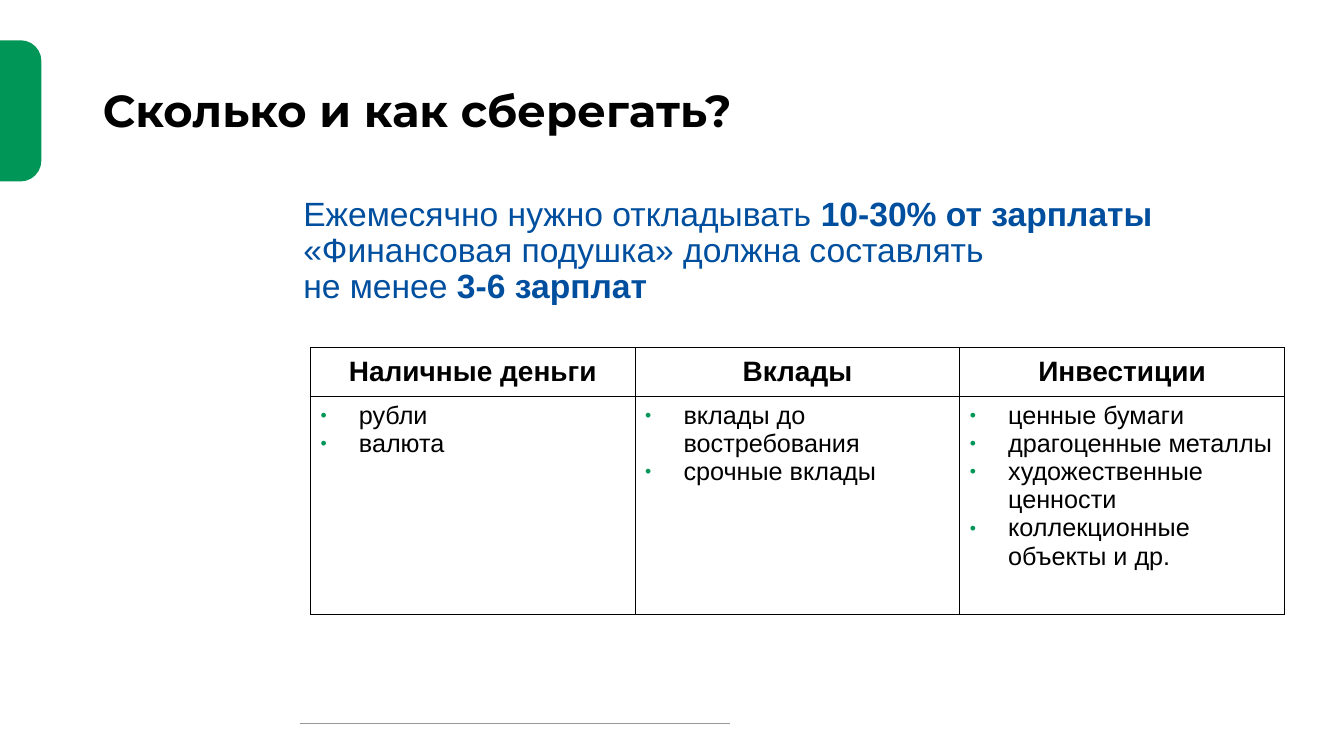
from lxml.etree import SubElement
from pptx import Presentation
from pptx.dml.color import RGBColor
from pptx.enum.shapes import MSO_CONNECTOR, MSO_SHAPE
from pptx.enum.text import MSO_ANCHOR as ANCHOR, MSO_AUTO_SIZE as AUTO, PP_ALIGN as ALIGN
from pptx.oxml.ns import qn
from pptx.util import Pt

PX = 9144
BLACK, GREEN, BLUE, GRAY = "000000", "009657", "004F9F", "999999"

ADVICE = [
    [("Ежемесячно нужно откладывать ", False), ("10-30% от зарплаты", True)],
    [("«Финансовая подушка» должна составлять", False)],
    [("не менее ", False), ("3-6 зарплат", True)],
]
SAVINGS = {
    "Наличные деньги": ["рубли", "валюта"],
    "Вклады": ["вклады до востребования", "срочные вклады"],
    "Инвестиции": ["ценные бумаги", "драгоценные металлы",
                   "художественные ценности", "коллекционные объекты и др."],
}


def rgb(code):
    """Turn a hex string into a colour."""
    return RGBColor.from_string(code)


def emu(*lengths):
    """Turn px lengths into EMU."""
    return [n * PX for n in lengths]


def style(r, size, color, bold=False, face="Arial"):
    """Format one run."""
    r.font.size, r.font.bold, r.font.name = Pt(size), bold, face
    r.font.color.rgb = rgb(color)


def add_bullet(p, indent):
    """Give a paragraph a hanging green bullet."""
    pPr = p._p.get_or_add_pPr()
    pPr.set("marL", str(indent * PX))
    pPr.set("indent", str(-indent * PX))
    SubElement(SubElement(pPr, qn("a:buClr")), qn("a:srgbClr"), val=GREEN)
    SubElement(pPr, qn("a:buSzPct"), val="70000")
    SubElement(pPr, qn("a:buFont"), typeface="Arial")
    SubElement(pPr, qn("a:buChar"), char="•")


def add_borders(cell):
    """Draw thin black lines on all sides of a cell."""
    tcPr = cell._tc.get_or_add_tcPr()
    for side in ("lnL", "lnR", "lnT", "lnB"):
        ln = SubElement(tcPr, qn(f"a:{side}"), w=str(Pt(1)))
        SubElement(SubElement(ln, qn("a:solidFill")), qn("a:srgbClr"), val=BLACK)


def add_tab(s, x, y, w, h):
    """Place the green side tab, rounded on its right."""
    left, top = x + (w - h) / 2, y + (h - w) / 2
    sp = s.shapes.add_shape(MSO_SHAPE.ROUND_2_SAME_RECTANGLE,
                            *(round(n) for n in emu(left, top, h, w)))
    sp.rotation = 90
    sp.adjustments[0], sp.adjustments[1] = 0.5, 0
    sp.shadow.inherit = False
    sp.fill.solid()
    sp.fill.fore_color.rgb = rgb(GREEN)
    sp.line.fill.background()


def add_rule(s, x, y, w):
    """Place the thin line at the foot."""
    line = s.shapes.add_connector(MSO_CONNECTOR.STRAIGHT, *emu(x, y, x + w, y))
    line.line.color.rgb = rgb(GRAY)
    line.line.width = Pt(0.75)
    SubElement(line._element.spPr, qn("a:effectLst"))


def add_title(s, x, y, w, h):
    """Fill the title placeholder."""
    sp = s.shapes.title
    sp.left, sp.top, sp.width, sp.height = emu(x, y, w, h)
    tf = sp.text_frame
    tf.text = "Сколько и как сберегать?"
    tf.auto_size, tf.vertical_anchor = AUTO.NONE, ANCHOR.MIDDLE
    p = tf.paragraphs[0]
    p.alignment, p.line_spacing = ALIGN.LEFT, 0.9
    style(p.runs[0], 32, BLACK, True, "Montserrat")


def add_advice(s, x, y, w, h):
    """Place the advice on how much to save."""
    tf = s.shapes.add_textbox(*emu(x, y, w, h)).text_frame
    tf.word_wrap, tf.vertical_anchor = True, ANCHOR.MIDDLE
    p = tf.paragraphs[0]
    p.line_spacing = 0.9
    for i, line in enumerate(ADVICE):
        if i:
            p.add_line_break()
        for text, bold in line:
            r = p.add_run()
            r.text = text
            style(r, 24, BLUE, bold)


def add_savings(s, x, y, w, h, head=48):
    """Place the table of ways to save."""
    table = s.shapes.add_table(2, len(SAVINGS), *emu(x, y, w, h)).table
    table.first_row = table.horz_banding = False
    table.rows[0].height, table.rows[1].height = emu(head, h - head)
    for col, (name, items) in enumerate(SAVINGS.items()):
        top, body = table.cell(0, col), table.cell(1, col)
        for cell in (top, body):
            add_borders(cell)
            cell.fill.background()
        top.text_frame.text = name
        top.vertical_anchor = ANCHOR.MIDDLE
        p = top.text_frame.paragraphs[0]
        p.alignment = ALIGN.CENTER
        style(p.runs[0], 20, BLACK, True)
        body.text_frame.text = "\n".join(items)
        for p in body.text_frame.paragraphs:
            add_bullet(p, 38)
            style(p.runs[0], 18, BLACK)


def main():
    """Build and save the slide."""
    prs = Presentation()
    prs.slide_width, prs.slide_height = emu(1333, 750)
    s = prs.slides.add_slide(prs.slide_layouts[5])
    add_rule(s, 298, 718, 426)
    add_tab(s, 0, 40, 41, 140)
    add_title(s, 92, 40, 1150, 145)
    add_savings(s, 308, 345, 966, 265)
    add_advice(s, 291, 214, 928, 71)
    prs.save("out.pptx")


if __name__ == "__main__":
    main()
